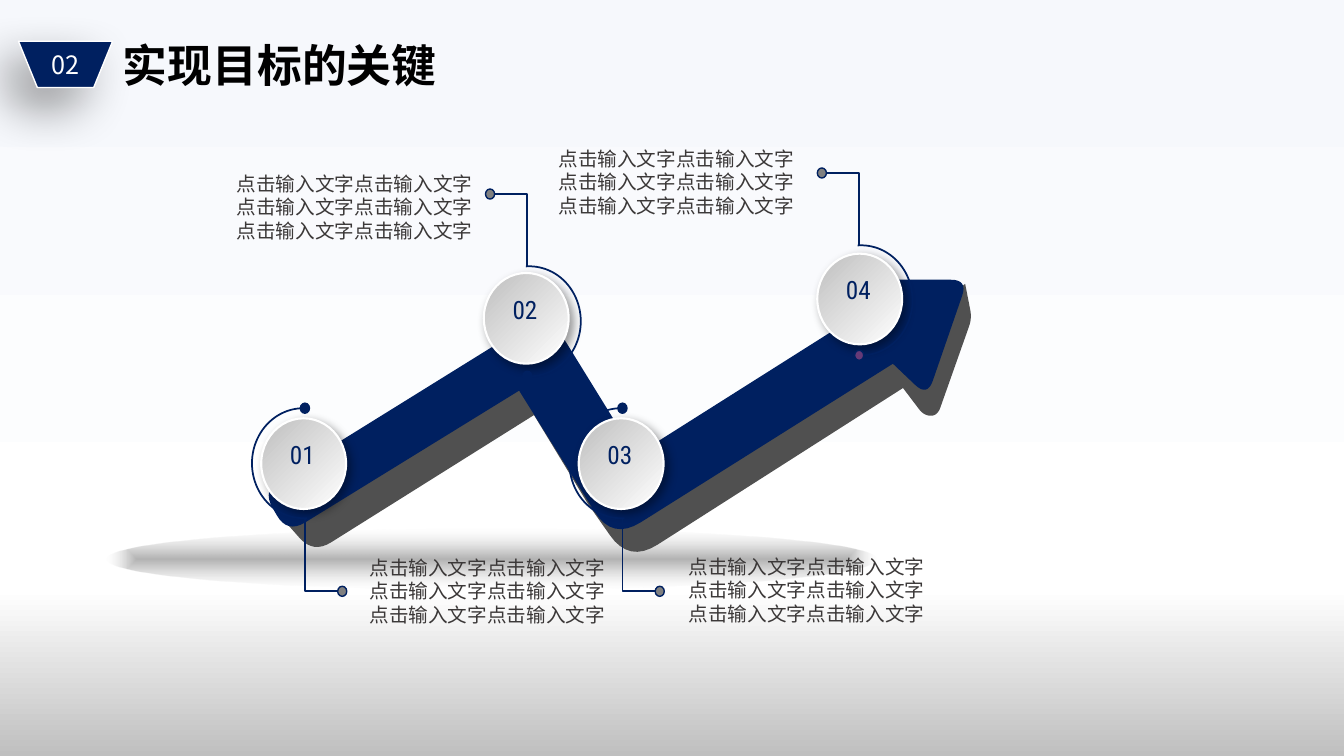
from dataclasses import dataclass
from math import dist

from lxml import etree
from pptx import Presentation
from pptx.dml.color import RGBColor
from pptx.enum import shapes, text
from pptx.oxml import ns
from pptx.util import Emu, Pt

WIDTH, HEIGHT = 12192000, 6858000
COLUMNS, ROWS = 160, 90
CELL = WIDTH / COLUMNS  # equals HEIGHT / ROWS
NAVY, WHITE, GREY = "002060", "FFFFFF", "808080"
CHINESE, LATIN = "Noto Sans CJK SC", "Roboto Condensed"
BODY = "点击输入文字" * 6
DRAWING = ns.nsdecls("a").split('"')[1]
Shape = shapes.MSO_SHAPE
Point = tuple[float, float]


@dataclass
class Corner:
    x: float
    y: float
    radius: float = 0


@dataclass
class Step:
    number: str
    circle: Point
    arc: Point
    body: Point
    below: bool
    dot: str = NAVY


FACE = [
    Corner(31.2, 58.3, 2.5), Corner(34.2, 63.5, 2.5), Corner(61.8, 46.5),
    Corner(72.9, 64.3, 4), Corner(106.3, 43.3), Corner(110.4, 47.2, 2),
    Corner(115.2, 33.3, 2), Corner(103, 33.3, 1), Corner(104.5, 36),
    Corner(75.7, 54.2), Corner(65.2, 37.2, 3),
]
SIDE = [
    Corner(32.7, 60.7), Corner(37.3, 65.9, 2.5), Corner(63.6, 49.4),
    Corner(61.8, 46.5), Corner(70, 60), Corner(74.9, 67, 4),
    Corner(107.5, 46.2), Corner(110, 49.5, 1), Corner(111.6, 49.5, 1),
    Corner(115.7, 37.9, 1), Corner(114.9, 33.8), Corner(106.3, 40),
    Corner(75.7, 56), Corner(66, 41),
]
STEPS = [
    Step("01", (31.1, 49.8), (30, 48.6), (42.8, 65.5), True),
    Step("02", (57.6, 32.5), (56.9, 31.7), (27, 19.8), False),
    Step("03", (68.9, 49.8), (67.8, 48.6), (80.8, 65.4), True),
    Step("04", (97.3, 30.2), (96.4, 29.2), (65.3, 16.8), False, "663A77"),
]


def cells(count: float) -> Emu:
    return Emu(round(count * CELL))


def colour(value: str) -> RGBColor:
    return RGBColor.from_string(value)


def xml(content: str):
    """Parse one drawing element whose children use the a: prefix."""
    name, rest = content[1:].split(None, 1)
    return etree.fromstring(f'<{name} xmlns:a="{DRAWING}" {rest}')


def set_gradient(owner, stops, angle: float | None) -> None:
    """Replace the solid fill in owner; no angle gives a fill from the middle."""
    marks = "".join(
        f'<a:gs pos="{share * 1000}"><a:srgbClr val="{value}">'
        f'<a:alpha val="{alpha * 1000}"/></a:srgbClr></a:gs>'
        for share, value, alpha in stops)
    way = (f'<a:lin ang="{angle * 60000}" scaled="0"/>' if angle is not None else
           '<a:path path="shape"><a:fillToRect l="50000" t="50000" r="50000" b="50000"/></a:path>')
    solid = owner.find(ns.qn("a:solidFill"))
    owner.replace(solid, xml(f'<a:gradFill rotWithShape="1"><a:gsLst>{marks}</a:gsLst>{way}</a:gradFill>'))


def set_shadow(shape, blur: float, distance: float, angle: int) -> None:
    effects = shape._element.spPr.find(ns.qn("a:effectLst"))
    effects.append(xml(
        f'<a:outerShdw blurRad="{Pt(blur)}" dist="{Pt(distance)}" dir="{angle * 60000}" '
        'algn="ctr" rotWithShape="0"><a:srgbClr val="000000"><a:alpha val="40000"/>'
        '</a:srgbClr></a:outerShdw>'))


def paint(shape, fill: str | None, line: str | None = None, weight: float = 1) -> None:
    shape.shadow.inherit = False
    if fill:
        shape.fill.solid()
        shape.fill.fore_color.rgb = colour(fill)
    else:
        shape.fill.background()
    if line:
        shape.line.color.rgb = colour(line)
        shape.line.width = Pt(weight)
    else:
        shape.line.fill.background()


def add_shape(page, kind, place: Point, size: Point, fill, line=None, weight=1.0):
    shape = page.shapes.add_shape(kind, *map(cells, (*place, *size)))
    paint(shape, fill, line, weight)
    return shape


def write(box, words: str, *, size: float, shade: str, font: str = CHINESE,
          bold: bool = False, centred: bool = False, spacing: float | None = None) -> None:
    frame = box.text_frame
    frame.word_wrap = True
    frame.vertical_anchor = text.MSO_ANCHOR.MIDDLE
    para = frame.paragraphs[0]
    para.alignment = text.PP_ALIGN.CENTER if centred else text.PP_ALIGN.LEFT
    if spacing:
        para.line_spacing = Pt(spacing)
    span = para.add_run()
    span.text = words
    span.font.name, span.font.size, span.font.bold = font, Pt(size), bold
    span.font.color.rgb = colour(shade)
    span.font._element.append(xml(f'<a:ea typeface="{font}"/>'))


def add_text(page, words: str, place: Point, size_in_cells: Point, **style) -> None:
    box = page.shapes.add_textbox(*map(cells, (*place, *size_in_cells)))
    write(box, words, **style)


def rounded(corners: list[Corner], pieces: int = 8) -> list[Point]:
    """Turn each corner with a radius into a short quadratic curve."""
    points = []
    for index, corner in enumerate(corners):
        here = (corner.x, corner.y)
        if not corner.radius:
            points.append(here)
            continue
        ends = []
        for other in (corners[index - 1], corners[(index + 1) % len(corners)]):
            there = (other.x, other.y)
            share = min(0.5, corner.radius / dist(here, there))
            ends.append([a + (b - a) * share for a, b in zip(here, there)])
        for piece in range(pieces + 1):
            t = piece / pieces
            points.append(tuple((1 - t) ** 2 * a + 2 * t * (1 - t) * b + t * t * c
                                for a, b, c in zip(ends[0], here, ends[1])))
    return points


def add_outline(page, points: list[Point], fill, line=None, closed=True) -> None:
    builder = page.shapes.build_freeform(*map(cells, points[0]))
    builder.add_line_segments([tuple(map(cells, point)) for point in points[1:]], close=closed)
    paint(builder.convert_to_shape(), fill, line, 1.25)


def add_dot(page, centre: Point, fill: str) -> None:
    width, height = 1.08, 1.2
    add_shape(page, Shape.OVAL, (centre[0] - width / 2, centre[1] - height / 2),
              (width, height), fill, NAVY)


def add_circle(page, step: Step) -> None:
    circle = add_shape(page, Shape.OVAL, step.circle, (10.1, 10.8), WHITE, WHITE, 1.5)
    set_gradient(circle._element.spPr, [(0, "BFBFBF", 100), (100, WHITE, 100)], 45)
    set_shadow(circle, 7, 4, 45)
    x, y = step.circle
    add_text(page, step.number, (x + 1.9, y + 1.9), (6, 4.8),
             size=18, shade=NAVY, font=LATIN, centred=True)


def add_callout(page, step: Step) -> None:
    """Draw the half ring, its dot, and the bent leader to the body text."""
    x, y = step.arc
    arc = add_shape(page, Shape.ARC, step.arc, (12.24, 13.1), None, NAVY, 1.25)
    if step.below:
        angles, middle, dot_y, start_y, way = (51.78, 162), x + 6.3, y, y + 13.2, 1
    else:
        angles, middle, dot_y, start_y, way = (159.78, 54), x + 5.88, y + 13.1, y, -1
    arc.adjustments[0], arc.adjustments[1] = angles
    add_dot(page, (middle, dot_y), step.dot)
    bend = start_y + 8.6 * way
    end = (middle + 4.44 * way, bend)
    add_outline(page, [(middle, start_y), (middle, bend), end], None, NAVY, closed=False)
    add_dot(page, end, GREY)


def main() -> None:
    deck = Presentation()
    deck.slide_width, deck.slide_height = Emu(WIDTH), Emu(HEIGHT)
    page = deck.slides.add_slide(deck.slide_layouts[6])
    page.background.fill.solid()
    backdrop = next(page._element.iter(ns.qn("p:bgPr")))
    set_gradient(backdrop, [(0, "F6F8FC", 100), (78, WHITE, 100), (100, "BFBFBF", 100)], 90)

    add_text(page, "实现目标的关键", (13.44, 3.84), (50.4, 7.68), size=32, shade="000000", bold=True)
    badge = add_shape(page, Shape.FLOWCHART_MANUAL_OPERATION, (2.2, 4.92), (11.2, 5.5), NAVY, WHITE)
    set_shadow(badge, 35, 20, 135)
    write(badge, "02", size=18, shade=WHITE, centred=True)

    ground = add_shape(page, Shape.OVAL, (12.72, 62.88), (91.68, 7.3), GREY)
    set_gradient(ground._element.spPr, [(0, "000000", 30), (29, "000000", 18), (100, "BFBFBF", 0)], None)
    add_outline(page, rounded(SIDE), "505050")
    add_outline(page, rounded(FACE), NAVY)

    for step in STEPS:
        add_circle(page, step)
    for step in STEPS:
        add_callout(page, step)
        add_text(page, BODY, step.body, (31.1, 9.7), size=14, shade="3B3838", spacing=16.8)
    deck.save("out.pptx")


if __name__ == "__main__":
    main()
